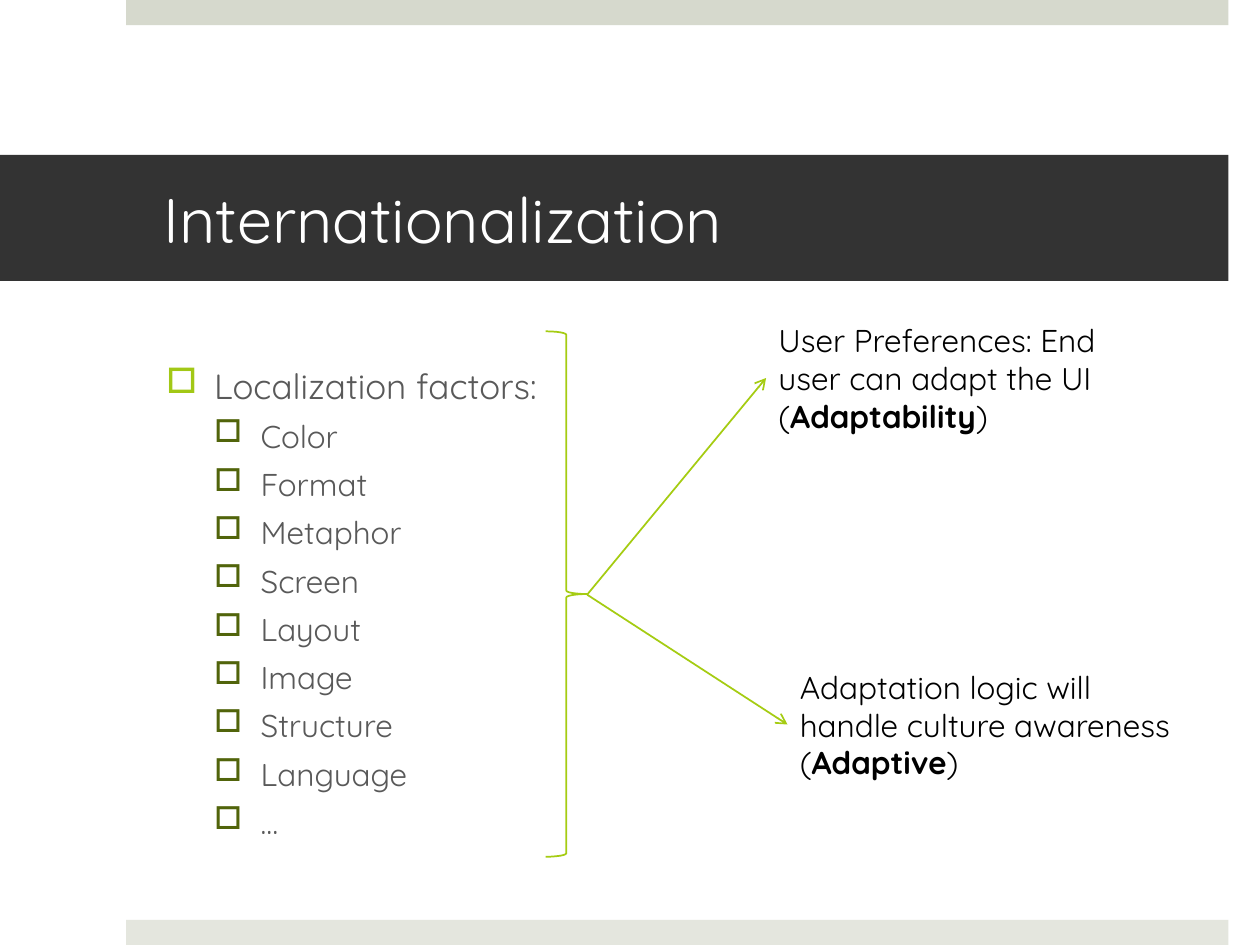
from dataclasses import dataclass

from lxml.etree import SubElement
from pptx import Presentation
from pptx.dml.color import RGBColor
from pptx.enum.shapes import MSO_CONNECTOR as Connector, MSO_SHAPE as Shape
from pptx.enum.text import MSO_ANCHOR as Anchor, PP_ALIGN as Align
from pptx.oxml.ns import qn
from pptx.util import Inches, Pt

FONT = "Quicksand"
COLORS = {
    "top": "D6D9CD", "bottom": "E4E6DE", "band": "333333", "white": "FFFFFF",
    "body": "595959", "black": "000000", "line": "A5CC12",
    "bullet": "A2C816", "sub_bullet": "51640B",
}
FACTORS = ["Color", "Format", "Metaphor", "Screen", "Layout", "Image",
           "Structure", "Language", "…"]
BRACE_TIP = (4.66, 4.72)


@dataclass
class Bar:
    left: float
    top: float
    width: float
    height: float
    color: str


@dataclass
class Outcome:
    left: float
    top: float
    text: str
    term: str
    arrow_end: tuple[float, float]


BARS = [Bar(1, 0, 8.75, 0.2, "top"), Bar(1, 7.3, 8.75, 0.2, "bottom")]
TITLE_BAR = Bar(0, 1.23, 9.75, 1, "band")
OUTCOMES = [
    Outcome(6.08, 2.5, "User Preferences: End user can adapt the UI (",
            "Adaptability", (6.08, 3)),
    Outcome(6.25, 5.25, "Adaptation logic will handle culture awareness (",
            "Adaptive", (6.25, 5.75)),
]


def rgb(name: str) -> RGBColor:
    return RGBColor.from_string(COLORS[name])


def add_span(para, text: str, *, size: float, color: str, bold: bool = False) -> None:
    span = para.add_run()
    span.text = text
    span.font.name = FONT
    span.font.size = Pt(size)
    span.font.bold = bold
    span.font.color.rgb = rgb(color)


def add_bar(page, bar: Bar):
    box = page.shapes.add_shape(Shape.RECTANGLE, Inches(bar.left), Inches(bar.top),
                                Inches(bar.width), Inches(bar.height))
    box.shadow.inherit = False
    box.fill.solid()
    box.fill.fore_color.rgb = rgb(bar.color)
    box.line.fill.background()
    return box


def add_title(page, text: str) -> None:
    frame = add_bar(page, TITLE_BAR).text_frame
    frame.word_wrap = True
    frame.vertical_anchor = Anchor.MIDDLE
    frame.margin_left, frame.margin_right = Inches(1.3), Inches(0.3)
    para = frame.paragraphs[0]
    para.alignment = Align.LEFT
    add_span(para, text, size=36, color="white")


def add_text_box(page, left: float, top: float, width: float, height: float):
    box = page.shapes.add_textbox(Inches(left), Inches(top), Inches(width), Inches(height))
    box.text_frame.word_wrap = True
    return box.text_frame


def add_bullet(para, text: str, *, level: int, indent: float, hanging: float,
               before: float, size: float, color: str) -> None:
    para.level = level
    para.space_before = Pt(before)
    props = para._p.get_or_add_pPr()
    props.set("marL", str(Inches(indent)))
    props.set("indent", str(-Inches(hanging)))
    bullet_color = SubElement(props, qn("a:buClr"))
    SubElement(bullet_color, qn("a:srgbClr"), val=COLORS[color])
    SubElement(props, qn("a:buChar"), char="□")
    add_span(para, text, size=size, color="body")


def add_factors(page) -> None:
    frame = add_text_box(page, 1.22, 2.84, 8.32, 4.01)
    add_bullet(frame.paragraphs[0], "Localization factors:", level=0, indent=0.38,
               hanging=0.38, before=20, size=20, color="bullet")
    for factor in FACTORS:
        add_bullet(frame.add_paragraph(), factor, level=1, indent=0.75,
                   hanging=0.37, before=6, size=18, color="sub_bullet")


def add_brace(page) -> None:
    brace = page.shapes.add_shape(Shape.RIGHT_BRACE, Inches(4.33), Inches(2.63),
                                  Inches(0.33), Inches(4.17))
    brace.shadow.inherit = False
    brace.fill.background()
    brace.line.color.rgb = rgb("line")
    brace.line.width = Pt(1)


def add_arrow(page, start: tuple[float, float], end: tuple[float, float]) -> None:
    points = [Inches(value) for value in (*start, *end)]
    arrow = page.shapes.add_connector(Connector.STRAIGHT, *points)
    arrow.line.color.rgb = rgb("line")
    arrow.line.width = Pt(1)
    SubElement(arrow.line._get_or_add_ln(), qn("a:tailEnd"), type="arrow")
    SubElement(arrow._element.spPr, qn("a:effectLst"))


def add_outcome(page, outcome: Outcome) -> None:
    para = add_text_box(page, outcome.left, outcome.top, 3.17, 1.01).paragraphs[0]
    for text, bold in ((outcome.text, False), (outcome.term, True), (")", False)):
        add_span(para, text, size=18, color="black", bold=bold)


def main() -> None:
    """Build the internationalization slide and save it."""
    deck = Presentation()
    deck.slide_width, deck.slide_height = Inches(10), Inches(7.5)
    page = deck.slides.add_slide(deck.slide_layouts[6])
    for bar in BARS:
        add_bar(page, bar)
    add_title(page, "Internationalization")
    add_factors(page)
    add_brace(page)
    for outcome in OUTCOMES:
        add_outcome(page, outcome)
    for outcome in OUTCOMES:
        add_arrow(page, BRACE_TIP, outcome.arrow_end)
    deck.save("out.pptx")


if __name__ == "__main__":
    main()
